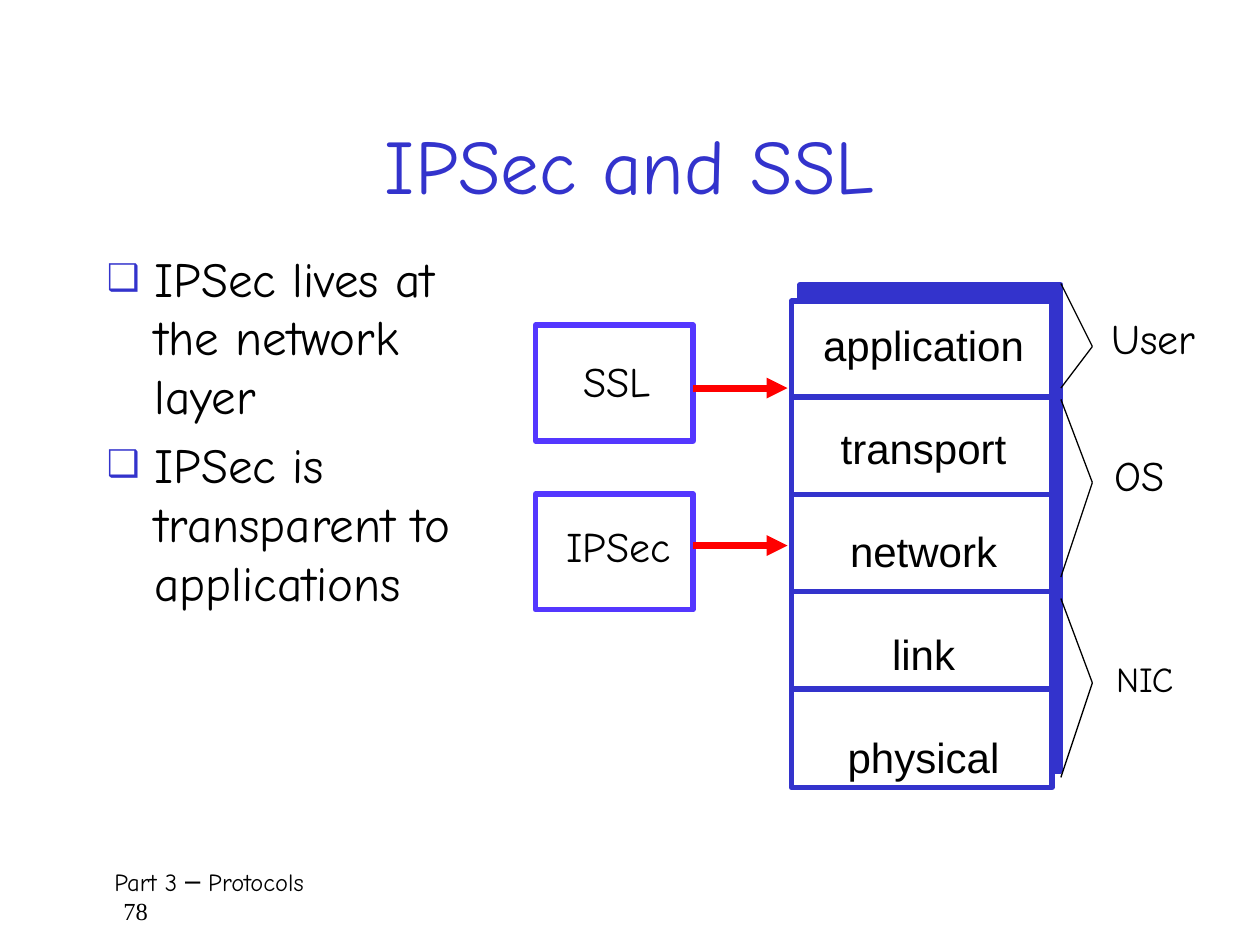
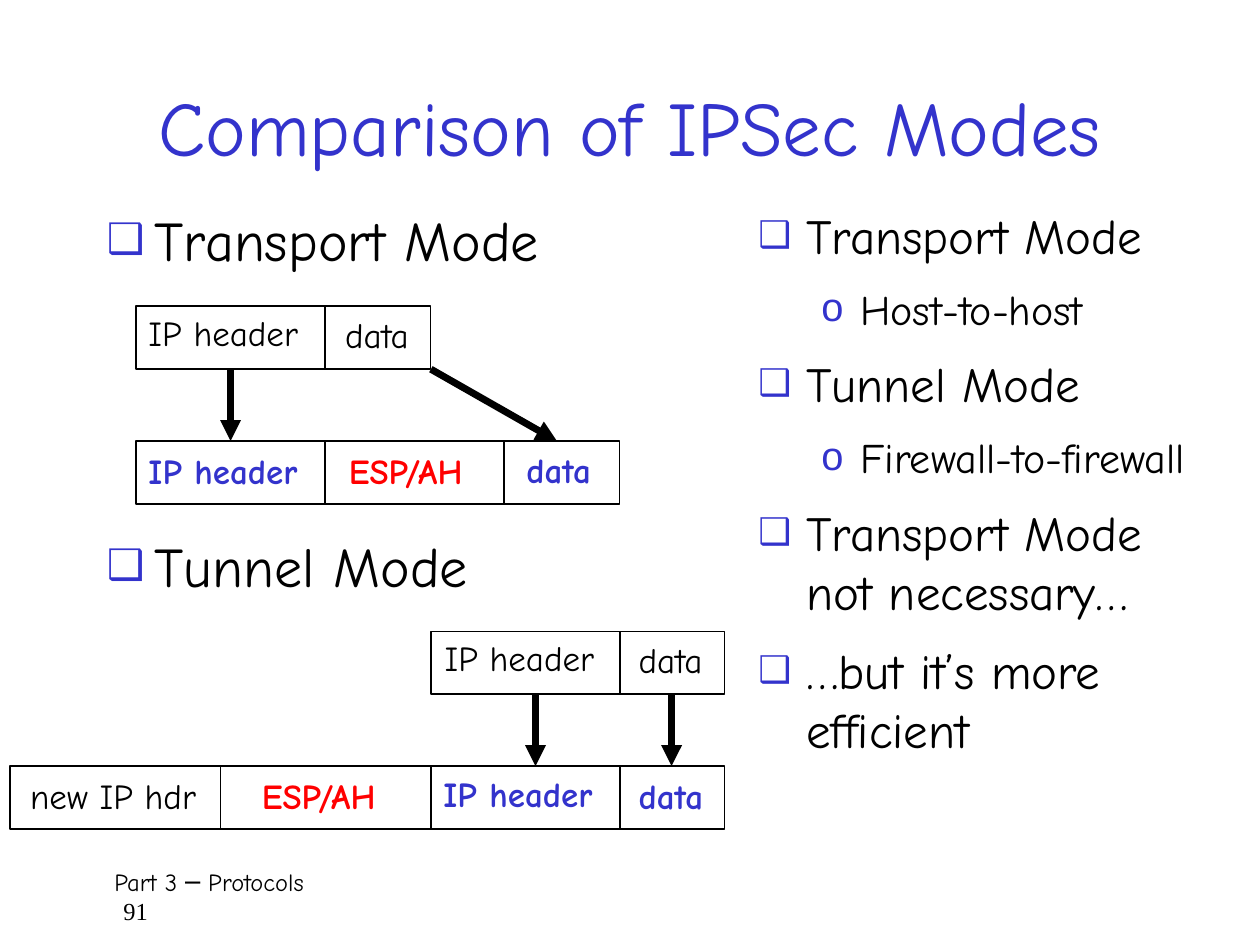
from lxml import etree
from pptx import Presentation
from pptx import util as u
from pptx.dml.color import RGBColor
from pptx.enum import shapes, text
from pptx.oxml import ns

BLUE = RGBColor(0x33, 0x33, 0xCC)
VIOLET = RGBColor(0x54, 0x37, 0xFF)
RED = RGBColor(0xFF, 0x00, 0x00)
BLACK = RGBColor(0x00, 0x00, 0x00)
WHITE = RGBColor(0xFF, 0xFF, 0xFF)
COMIC, ARIAL, TIMES = "Comic Neue", "Arial", "Times New Roman"
CENTER = text.PP_ALIGN.CENTER
RECTANGLE = shapes.MSO_SHAPE.RECTANGLE
# Bullet character, size in percent, left margin and hanging indent by level
BULLETS = [("❑", 75, 0.38, -0.38), ("o", 95, 0.81, -0.31)]


def add_text(slide, box, lines, size=20, color=BLACK, font=COMIC, bold=False,
             align=None, wrap=False, bullets=False, after=None):
    """Add a text box; each line is a string, or (string, level, size) with bullets."""
    shape = slide.shapes.add_textbox(*map(u.Inches, box))
    frame = shape.text_frame
    frame.word_wrap = wrap
    for index, line in enumerate(lines):
        words, level, points = line if bullets else (line, 0, size)
        paragraph = frame.paragraphs[0] if index == 0 else frame.add_paragraph()
        paragraph.alignment = align
        if after is not None:
            paragraph.space_after = u.Pt(after)
        if bullets:
            character, percent, margin, indent = BULLETS[level]
            paragraph.level = level
            paragraph.space_before = u.Pt(0.2 * points)
            properties = paragraph._p.get_or_add_pPr()
            properties.set("marL", str(u.Inches(margin)))
            properties.set("indent", str(u.Inches(indent)))
            bullet_color = etree.SubElement(properties, ns.qn("a:buClr"))
            etree.SubElement(bullet_color, ns.qn("a:srgbClr"), val=str(BLUE))
            etree.SubElement(properties, ns.qn("a:buSzPct"), val=str(percent * 1000))
            etree.SubElement(properties, ns.qn("a:buFont"), typeface=ARIAL)
            etree.SubElement(properties, ns.qn("a:buChar"), char=character)
        run = paragraph.add_run()
        run.text = words
        run.font.size = u.Pt(points)
        run.font.name = font
        run.font.bold = bold
        run.font.color.rgb = color
    return frame


def add_line(slide, start, end, color=BLACK, width=0.75, arrow=False):
    line = slide.shapes.add_connector(shapes.MSO_CONNECTOR.STRAIGHT,
                                      *map(u.Inches, start + end))
    line.line.color.rgb = color
    line.line.width = u.Pt(width)
    if arrow:
        etree.SubElement(line.line._get_or_add_ln(), ns.qn("a:tailEnd"), type="triangle")
    etree.SubElement(line._element.spPr, ns.qn("a:effectLst"))


presentation = Presentation()
presentation.slide_width = u.Inches(10)
presentation.slide_height = u.Inches(7.5)

# Title and footer of every slide
slides = []
for title, top, height, number in [("IPSec and SSL", 0.67, 1.25, "78"),
                                   ("Comparison of IPSec Modes", 0.5, 1, "91")]:
    slide = presentation.slides.add_slide(presentation.slide_layouts[6])
    frame = add_text(slide, (0.75, top, 8.5, height), [title], 44, BLUE,
                     align=CENTER, wrap=True)
    frame.vertical_anchor = text.MSO_ANCHOR.MIDDLE
    footer = add_text(slide, (0.75, 6.83, 8.58, 0.5), ["Part 3 ─ Protocols", number],
                      14, wrap=True)
    for paragraph, margin in zip(footer.paragraphs, (0.06, 0.13)):
        paragraph._p.get_or_add_pPr().set("marL", str(u.Inches(margin)))
    footer.paragraphs[1].runs[0].font.name = TIMES
    slides.append(slide)
layers_slide, modes_slide = slides

# Slide 1: protocol stack
add_text(layers_slide, (0.75, 1.92, 3.25, 4.67),
         [("IPSec lives at the network layer", 0, 28),
          ("IPSec is transparent to applications", 0, 28)], wrap=True, bullets=True)

for left, top, width, height, fill, outline in [
        (6.35, 2.26, 2.07, 3.86, BLUE, BLUE),
        (6.28, 2.39, 2.07, 3.86, WHITE, BLUE),
        (4.25, 2.58, 1.25, 0.92, None, VIOLET),
        (4.25, 3.92, 1.25, 0.92, None, VIOLET)]:
    shape = layers_slide.shapes.add_shape(RECTANGLE, *map(u.Inches, (left, top, width, height)))
    shape.shadow.inherit = False
    shape.line.color.rgb = outline
    shape.line.width = u.Pt(3)
    if fill is None:
        shape.fill.background()
    else:
        shape.fill.solid()
        shape.fill.fore_color.rgb = fill

add_text(layers_slide, (6.43, 2.49, 1.8, 3.69),
         ["application", "transport", "network", "link", "physical"],
         24, font=ARIAL, align=CENTER, after=30)
for divider in range(4):
    y = 3.15 + 0.773 * divider
    add_line(layers_slide, (6.27, y), (8.33, y), BLUE, 3)

for protocol, box, arrow_y in [("SSL", (4.47, 2.77, 0.85, 0.57), 3.08),
                               ("IPSec", (4.34, 4.08, 1.14, 0.57), 4.33)]:
    add_text(layers_slide, box, [protocol], 24, align=CENTER)
    add_line(layers_slide, (5.5, arrow_y), (6.25, arrow_y), RED, 4, arrow=True)

for owner, box, size, top, tip, bottom in [
        ("User", (8.72, 2.43, 0.95, 0.57), 24, 2.25, 2.75, 3.08),
        ("OS", (8.75, 3.52, 0.7, 0.57), 24, 3.17, 3.83, 4.58),
        ("NIC", (8.76, 5.17, 0.74, 0.49), 20, 4.75, 5.42, 6.17)]:
    add_line(layers_slide, (8.42, top), (8.67, tip))
    add_line(layers_slide, (8.67, tip), (8.42, bottom))
    add_text(layers_slide, box, [owner], size)

# Slide 2: packet layouts of the two modes
for mode, top in [("Transport Mode", 1.58), ("Tunnel Mode", 4.17)]:
    add_text(modes_slide, (0.75, top, 4.83, 0.83), [(mode, 0, 32)], wrap=True, bullets=True)

# Each packet: top, cell edges, then label, left, top, width, colour and weight per cell
packets = [
    (2.43, [1.08, 2.58, 3.42], [("IP header", 1.08, 2.42, 1.48, BLACK, False),
                                ("data", 2.64, 2.44, 0.78, BLACK, False)]),
    (3.5, [1.08, 2.58, 4, 4.92], [("IP header", 1.08, 3.52, 1.54, BLUE, True),
                                  ("ESP/AH", 2.67, 3.52, 1.27, RED, True),
                                  ("data", 4.08, 3.51, 0.8, BLUE, True)]),
    (5.01, [3.42, 4.92, 5.75], [("IP header", 3.43, 5, 1.48, BLACK, False),
                                ("data", 4.97, 5.02, 0.78, BLACK, False)]),
    (6.08, [0.08, 1.75, 3.42, 4.92, 5.75], [("new IP hdr", 0.14, 6.1, 1.61, BLACK, False),
                                            ("ESP/AH", 1.98, 6.1, 1.27, RED, True),
                                            ("IP header", 3.42, 6.08, 1.54, BLUE, True),
                                            ("data", 4.97, 6.1, 0.8, BLUE, True)]),
]
for top, edges, labels in packets:
    packet = modes_slide.shapes.add_shape(
        RECTANGLE, *map(u.Inches, (edges[0], top, edges[-1] - edges[0], 0.5)))
    packet.shadow.inherit = False
    packet.fill.background()
    packet.line.color.rgb = BLACK
    packet.line.width = u.Pt(0.75)
    for x in edges[1:-1]:
        add_line(modes_slide, (x, top), (x, top + 0.5))
    for label, left, label_top, width, color, bold in labels:
        add_text(modes_slide, (left, label_top, width, 0.49), [label], color=color, bold=bold)

for start, end in [((1.83, 2.93), (1.83, 3.5)), ((3.42, 2.93), (4.42, 3.5)),
                   ((4.25, 5.5), (4.25, 6.08)), ((5.33, 5.5), (5.33, 6.08))]:
    add_line(modes_slide, start, end, width=4, arrow=True)

add_text(modes_slide, (5.92, 1.58, 3.75, 5.25),
         [("Transport Mode", 0, 28), ("Host-to-host", 1, 24),
          ("Tunnel Mode", 0, 28), ("Firewall-to-firewall", 1, 24),
          ("Transport Mode not necessary…", 0, 28), ("…but it’s more efficient", 0, 28)],
         wrap=True, bullets=True, after=6)

presentation.save("out.pptx")
